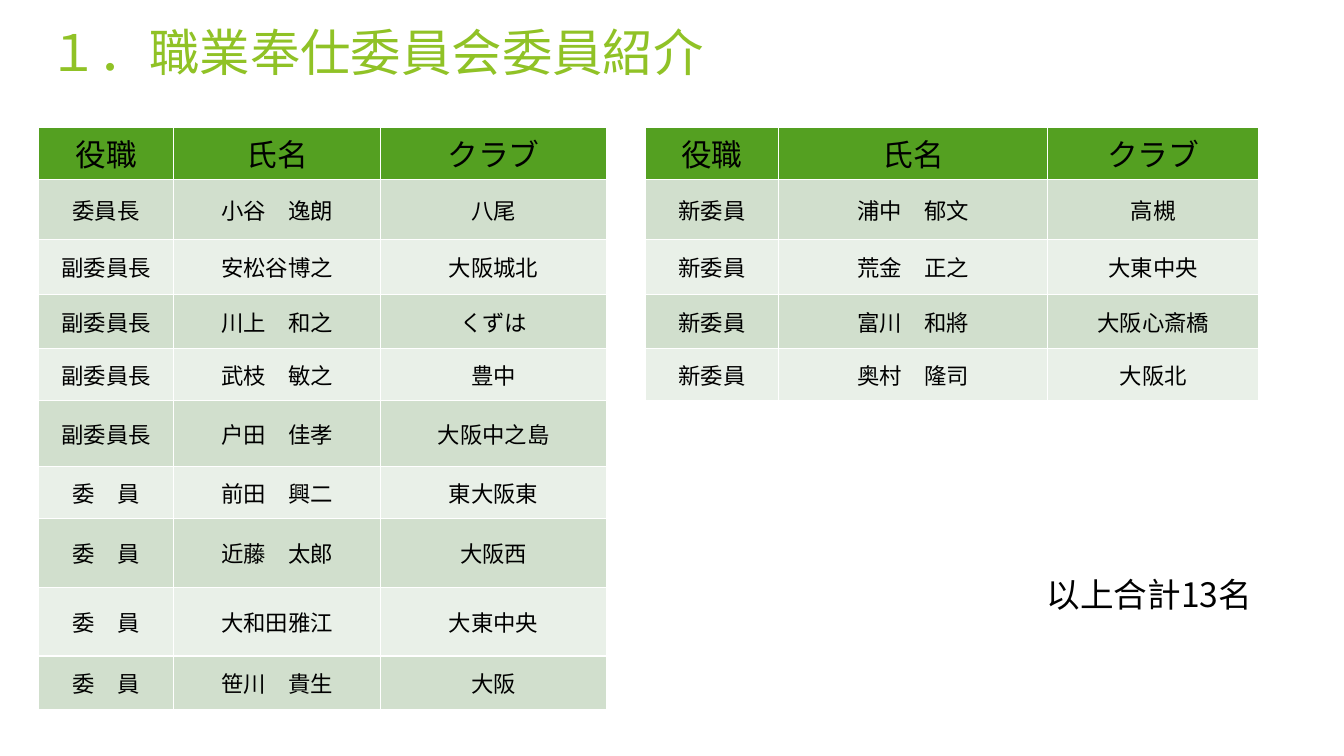
from typing import NamedTuple

from lxml import etree
from pptx import Presentation
from pptx.dml.color import RGBColor
from pptx.enum.text import MSO_ANCHOR, PP_ALIGN
from pptx.oxml.ns import qn
from pptx.util import Cm, Pt

LEFT, CENTER, RIGHT = PP_ALIGN.LEFT, PP_ALIGN.CENTER, PP_ALIGN.RIGHT
TOP, MIDDLE = MSO_ANCHOR.TOP, MSO_ANCHOR.MIDDLE

FONT = "Noto Sans CJK JP"
BLACK = RGBColor(0x00, 0x00, 0x00)
LIME = RGBColor(0x90, 0xC2, 0x26)
GREEN = RGBColor(0x54, 0xA0, 0x21)
BANDS = (RGBColor(0xD1, 0xDF, 0xCD), RGBColor(0xE9, 0xF0, 0xE8))

WIDTHS = (3.41, 5.21, 5.7, 0.97, 3.36, 6.78, 5.33)
HEIGHTS = (1.09, 1.51, 1.39, 1.35, 1.33, 1.65, 1.32, 1.73, 1.73, 1.35)


class Member(NamedTuple):
    role: str
    name: str
    club: str


class Block(NamedTuple):
    col: int
    members: list[Member]


HEAD = Member("役職", "氏名", "クラブ")
BLOCKS = (
    Block(0, [
        Member("委員長", "小谷　逸朗", "八尾"),
        Member("副委員長", "安松谷博之", "大阪城北"),
        Member("副委員長", "川上　和之", "くずは"),
        Member("副委員長", "武枝　敏之", "豊中"),
        Member("副委員長", "戸田　佳孝", "大阪中之島"),
        Member("委　員", "前田　興二", "東大阪東"),
        Member("委　員", "近藤　太郎", "大阪西"),
        Member("委　員", "大和田雅江", "大東中央"),
        Member("委　員", "笹川　貴生", "大阪"),
    ]),
    Block(4, [
        Member("新委員", "浦中　郁文", "高槻"),
        Member("新委員", "荒金　正之", "大東中央"),
        Member("新委員", "富川　和將", "大阪心斎橋"),
        Member("新委員", "奥村　隆司", "大阪北"),
    ]),
)


def write(frame, text: str, size: int, color: RGBColor, align: PP_ALIGN) -> None:
    """Fill a frame or cell with one paragraph in the slide's font."""
    frame.text = text
    para = getattr(frame, "text_frame", frame).paragraphs[0]
    para.alignment = align
    font = para.font
    font.name, font.size, font.bold = FONT, Pt(size), False
    font.color.rgb = color
    props = para._p.pPr.find(qn("a:defRPr"))
    etree.SubElement(props, qn("a:ea"), typeface=FONT)


def pad(cell, top: float, bottom: float) -> None:
    cell.margin_left = cell.margin_right = Cm(0.18)
    cell.margin_top, cell.margin_bottom = Cm(top), Cm(bottom)


def add_block(table, block: Block) -> None:
    for row, member in enumerate([HEAD, *block.members]):
        head = row == 0
        for col, text in enumerate(member, block.col):
            cell = table.cell(row, col)
            cell.fill.solid()
            cell.fill.fore_color.rgb = GREEN if head else BANDS[(row - 1) % 2]
            cell.vertical_anchor = MIDDLE
            edge = 0.1 if head else 0
            pad(cell, edge, edge)
            write(cell, text, 22 if head else 16, BLACK, CENTER)


def add_roster(slide) -> None:
    table = slide.shapes.add_table(
        len(HEIGHTS), len(WIDTHS), Cm(0.97), Cm(3.2),
        Cm(sum(WIDTHS)), Cm(sum(HEIGHTS))).table
    for col, width in zip(table.columns, WIDTHS):
        col.width = Cm(width)
    for row, height in zip(table.rows, HEIGHTS):
        row.height = Cm(height)
    for cell in table.iter_cells():
        cell.fill.background()
    for block in BLOCKS:
        add_block(table, block)

    table.cell(5, 4).merge(table.cell(6, 6))
    total = table.cell(7, 4)
    total.merge(table.cell(9, 6))
    total.vertical_anchor = TOP
    pad(total, 1.25, 0)
    write(total, "以上合計13名", 24, BLACK, RIGHT)


def add_title(slide) -> None:
    title = slide.shapes.title
    title.left, title.top = Cm(0.97), Cm(0.36)
    title.width, title.height = Cm(21.62), Cm(1.88)
    frame = title.text_frame
    frame.vertical_anchor = MIDDLE
    write(frame, "１．職業奉仕委員会委員紹介", 36, LIME, LEFT)


def main() -> None:
    deck = Presentation()
    deck.slide_width, deck.slide_height = Cm(33.87), Cm(19.05)
    slide = deck.slides.add_slide(deck.slide_layouts[5])
    add_roster(slide)
    add_title(slide)
    deck.save("out.pptx")


if __name__ == "__main__":
    main()
